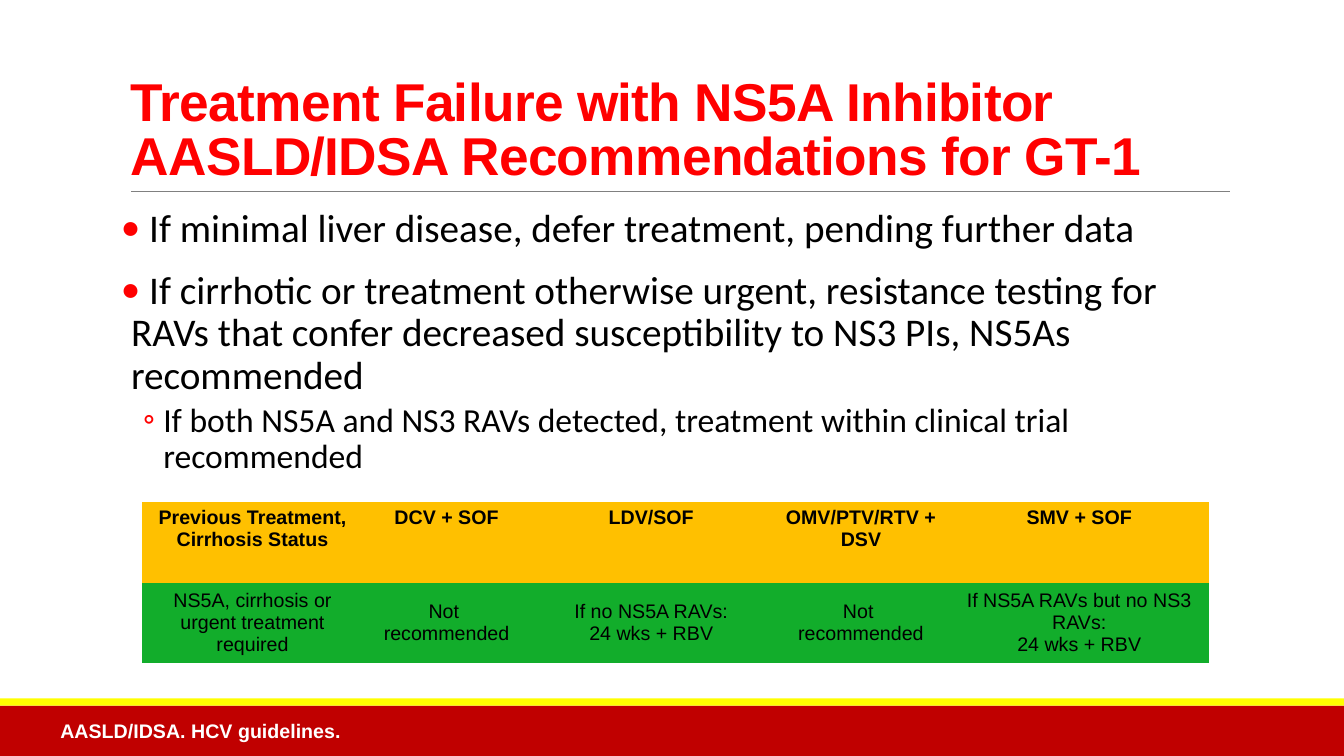
from dataclasses import dataclass

from lxml import etree
from pptx import Presentation
from pptx import util as u
from pptx.dml.color import RGBColor
from pptx.enum import shapes, text
from pptx.oxml.ns import qn

RED, BLACK, WHITE = "FF0000", "000000", "FFFFFF"


@dataclass
class Band:
    top: float
    height: float
    color: str


@dataclass
class Bullet:
    words: str
    size: int
    mark: str
    left: float
    hanging: float
    before: int
    after: int
    level: int = 0


@dataclass
class TableRow:
    fill: str
    bold: bool
    anchor: text.MSO_ANCHOR
    cells: list[str]


BANDS = [Band(7, 0.5, "C00000"), Band(6.93, 0.07, "FFFF00")]
BULLETS = [
    Bullet(" If minimal liver disease, defer treatment, pending further data",
           28, "•", 0.1, 0.1, 0, 2),
    Bullet(" If cirrhotic or treatment otherwise urgent, resistance testing for RAVs that confer "
           "decreased susceptibility to NS3 PIs, NS5As recommended", 28, "•", 0.1, 0.1, 12, 2),
    Bullet("If both NS5A and NS3 RAVs detected, treatment within clinical trial recommended",
           24, "◦", 0.42, 0.2, 2, 4, level=1),
]
COLUMN_WIDTHS = [2.19, 1.66, 2.4, 1.76, 2.57]
ROW_HEIGHT = 0.8
ROWS = [
    TableRow("FFC000", True, text.MSO_ANCHOR.TOP,
             ["Previous Treatment, Cirrhosis Status", "DCV + SOF", "LDV/SOF",
              "OMV/PTV/RTV + DSV", "SMV + SOF"]),
    TableRow("12AD2B", False, text.MSO_ANCHOR.MIDDLE,
             ["NS5A, cirrhosis or urgent treatment required", "Not \nrecommended",
              "If no NS5A RAVs:\v24 wks + RBV", "Not \nrecommended",
              "If NS5A RAVs but no NS3 RAVs:\v24 wks + RBV"]),
]


def rgb(value: str) -> RGBColor:
    return RGBColor.from_string(value)


def style_spans(para, color: str, **formats) -> None:
    for span in para.runs:
        span.font.color.rgb = rgb(color)
        for name, value in formats.items():
            setattr(span.font, name, value)


def add_box(page, left: float, top: float, width: float, height: float, **formats):
    """Add a wrapping text box and return its text frame."""
    box = page.shapes.add_textbox(*map(u.Inches, (left, top, width, height)))
    frame = box.text_frame
    for name, value in {"word_wrap": True, **formats}.items():
        setattr(frame, name, value)
    return frame


def draw_band(page, band: Band) -> None:
    shape = page.shapes.add_shape(shapes.MSO_SHAPE.RECTANGLE, 0, u.Inches(band.top),
                                  u.Inches(13.33), u.Inches(band.height))
    shape.shadow.inherit = False
    shape.fill.solid()
    shape.fill.fore_color.rgb = rgb(band.color)
    shape.line.fill.background()


def draw_rule(page) -> None:
    rule = page.shapes.add_connector(shapes.MSO_CONNECTOR.STRAIGHT,
                                     *map(u.Inches, (1.3, 1.9, 12.2, 1.9)))
    rule.line.color.rgb = rgb("808080")
    rule.line.width = u.Pt(0.5)
    etree.SubElement(rule.element.spPr, qn("a:effectLst"))


def draw_title(page) -> None:
    frame = add_box(page, 1.2, 0.31, 11, 1.59, vertical_anchor=text.MSO_ANCHOR.BOTTOM)
    para = frame.paragraphs[0]
    para.text = "Treatment Failure with NS5A Inhibitor\vAASLD/IDSA Recommendations for GT-1"
    para.line_spacing = 0.85
    style_spans(para, RED, name="Arial", size=u.Pt(38), bold=True)
    for span in para.runs:
        span.font._element.set("spc", "-50")


def add_bullet(para, bullet: Bullet) -> None:
    props = para._p.get_or_add_pPr()
    props.set("marL", str(u.Inches(bullet.left)))
    props.set("indent", str(-u.Inches(bullet.hanging)))
    mark_color = etree.SubElement(props, qn("a:buClr"))
    etree.SubElement(mark_color, qn("a:srgbClr"), val=RED)
    etree.SubElement(props, qn("a:buFont"), typeface="Calibri")
    etree.SubElement(props, qn("a:buChar"), char=bullet.mark)
    formats = {"text": bullet.words, "level": bullet.level, "line_spacing": 0.9,
               "space_before": u.Pt(bullet.before), "space_after": u.Pt(bullet.after)}
    for name, value in formats.items():
        setattr(para, name, value)
    style_spans(para, BLACK, name="Calibri", size=u.Pt(bullet.size))


def draw_bullets(page) -> None:
    frame = add_box(page, 1.2, 2.02, 11, 2.8, margin_left=0, margin_right=0)
    for index, bullet in enumerate(BULLETS):
        add_bullet(frame.add_paragraph() if index else frame.paragraphs[0], bullet)


def draw_table(page) -> None:
    size = (1.41, 4.98, sum(COLUMN_WIDTHS), ROW_HEIGHT * len(ROWS))
    table = page.shapes.add_table(len(ROWS), len(COLUMN_WIDTHS), *map(u.Inches, size)).table
    table.first_row = table.horz_banding = False
    # The "No Style, No Grid" table style has no cell borders
    table._tbl.tblPr.find(qn("a:tableStyleId")).text = "{2D5ABB26-0587-4C30-8999-92F81FD0307C}"
    for column, width in zip(table.columns, COLUMN_WIDTHS):
        column.width = u.Inches(width)
    for line, row in zip(table.rows, ROWS):
        line.height = u.Inches(ROW_HEIGHT)
        for cell, words in zip(line.cells, row.cells):
            cell.fill.solid()
            cell.fill.fore_color.rgb = rgb(row.fill)
            cell.vertical_anchor = row.anchor
            cell.text_frame.text = words
            for para in cell.text_frame.paragraphs:
                para.alignment = text.PP_ALIGN.CENTER
                style_spans(para, BLACK, name="Arial", size=u.Pt(14), bold=row.bold)


def draw_source(page) -> None:
    para = add_box(page, 0.5, 7.08, 6.44, 0.34).paragraphs[0]
    para.text = "AASLD/IDSA. HCV guidelines."
    style_spans(para, WHITE, name="Arial", size=u.Pt(14), bold=True)


def main() -> None:
    deck = Presentation()
    deck.slide_width, deck.slide_height = u.Inches(13.33), u.Inches(7.5)
    page = deck.slides.add_slide(deck.slide_layouts[6])
    for band in BANDS:
        draw_band(page, band)
    draw_rule(page)
    draw_title(page)
    draw_bullets(page)
    draw_source(page)
    draw_table(page)
    deck.save("out.pptx")


if __name__ == "__main__":
    main()
